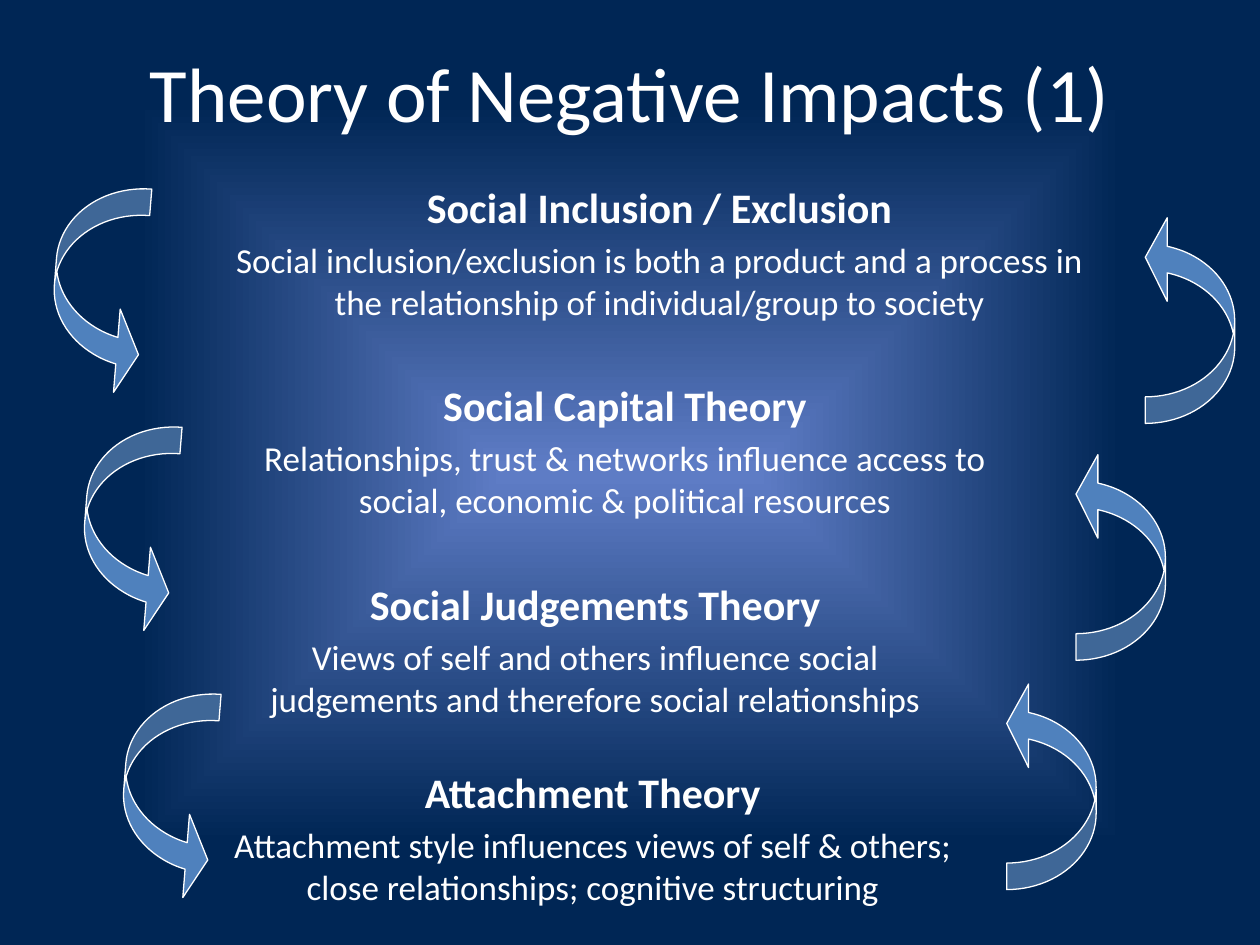
from lxml import etree
from pptx import Presentation
from pptx import util as u
from pptx.dml.color import RGBColor
from pptx.enum import shapes, text
from pptx.oxml import ns

Pt = u.Pt
NAVY = RGBColor(0x00, 0x26, 0x55)
GLOW = RGBColor(0x5E, 0x7C, 0xC5)
BLUE = RGBColor(0x4F, 0x81, 0xBD)
WHITE = RGBColor(0xFF, 0xFF, 0xFF)

TITLE = "Theory of Negative Impacts (1)"
# left, top, width, heading, summary, right indent of the heading
THEORIES = [
    (121.7, 100.1, 510.5, "Social Inclusion / Exclusion",
     "Social inclusion/exclusion is both a product and a process in "
     "the relationship of individual/group to society", 0),
    (133.2, 213.1, 447.8, "Social Capital Theory",
     "Relationships, trust & networks influence access to "
     "social, economic & political resources", 0),
    (127.4, 326.9, 425.5, "Social Judgements Theory",
     "Views of self and others influence social "
     "judgements and therefore social relationships", 0),
    (121.7, 434.2, 442.1, "Attachment Theory",
     "Attachment style influences views of self & others; "
     "close relationships; cognitive structuring", 8),
]
THEORY_HEIGHT = 88.6
# rotation, then left and top of each arrow before it is turned
ARROWS = {
    270: [(541.4, 423.4), (581, 292.3), (620.6, 157)],
    94.6: [(-2.9, 139.7), (14.4, 275.8), (36.7, 428.4)],
}
ARROW_SIZE = (118.8, 51.1)
ARROW_BENDS = (0.297, 0.933, 0.245)


class Slide:
    def __init__(self, page, font="Calibri", color=WHITE):
        self.page = page
        self.font = font
        self.color = color

    def glow_background(self, inner, outer):
        """Fill the background with a gradient that spreads from the centre."""
        fill = self.page.background.fill
        fill.gradient()
        for stop, color, position in zip(fill.gradient_stops, (inner, outer), (0.01, 0.78)):
            stop.color.rgb = color
            stop.position = position
        gradient = self.page.element.find(".//" + ns.qn("a:gradFill"))
        gradient.remove(gradient.find(ns.qn("a:lin")))
        spread = etree.SubElement(gradient, ns.qn("a:path"), path="shape")
        edges = dict.fromkeys("ltrb", "50000")
        etree.SubElement(spread, ns.qn("a:fillToRect"), **edges)

    def text_box(self, left, top, width, height, anchor=text.MSO_ANCHOR.TOP):
        box = self.page.shapes.add_textbox(Pt(left), Pt(top), Pt(width), Pt(height))
        frame = box.text_frame
        frame.word_wrap = True
        frame.vertical_anchor = anchor
        return frame

    def set_text(self, para, words, size, bold=False, before=0, right=0):
        para.alignment = text.PP_ALIGN.CENTER
        para.space_before = Pt(before)
        if right:
            para._p.get_or_add_pPr().set("marR", str(Pt(right)))
        span = para.add_run()
        span.text = words
        span.font.name = self.font
        span.font.size = Pt(size)
        span.font.bold = bold
        span.font.color.rgb = self.color

    def title(self, words):
        frame = self.text_box(36, 21.6, 648, 61.2, text.MSO_ANCHOR.MIDDLE)
        self.set_text(frame.paragraphs[0], words, size=44)

    def theory(self, left, top, width, heading, summary, right):
        frame = self.text_box(left, top, width, THEORY_HEIGHT)
        self.set_text(frame.paragraphs[0], heading, size=24, bold=True, right=right)
        self.set_text(frame.add_paragraph(), summary, size=20, before=4)

    def arrow(self, left, top, rotation):
        width, height = ARROW_SIZE
        arrow = self.page.shapes.add_shape(
            shapes.MSO_SHAPE.CURVED_UP_ARROW, Pt(left), Pt(top), Pt(width), Pt(height))
        for index, bend in enumerate(ARROW_BENDS):
            arrow.adjustments[index] = bend
        arrow.rotation = rotation
        arrow.shadow.inherit = False
        arrow.fill.solid()
        arrow.fill.fore_color.rgb = BLUE
        arrow.line.color.rgb = WHITE
        arrow.line.width = Pt(0.75)


def main():
    deck = Presentation()
    deck.slide_width, deck.slide_height = Pt(720), Pt(540)
    slide = Slide(deck.slides.add_slide(deck.slide_layouts[6]))
    slide.glow_background(GLOW, NAVY)
    slide.title(TITLE)
    for theory in THEORIES:
        slide.theory(*theory)
    for rotation, places in ARROWS.items():
        for left, top in places:
            slide.arrow(left, top, rotation)
    deck.save("out.pptx")


if __name__ == "__main__":
    main()
